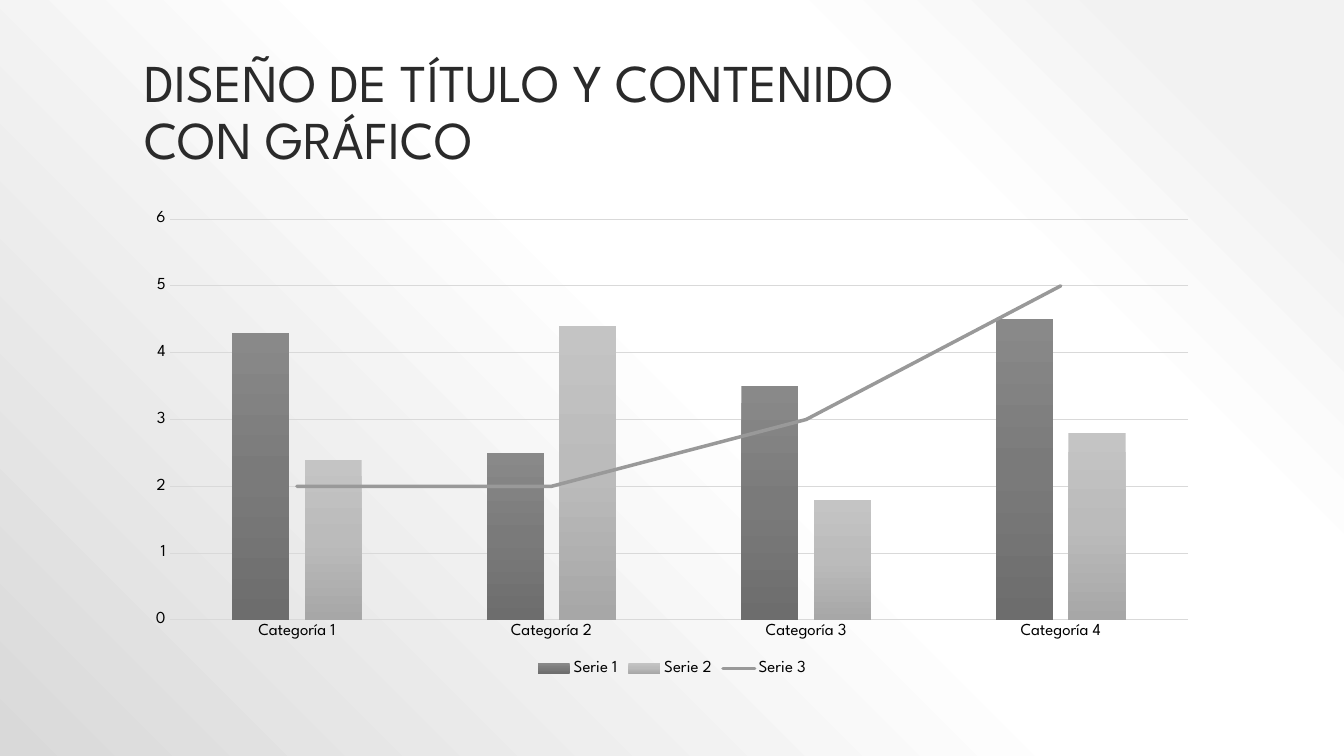
from lxml import etree
from pptx import Presentation, oxml
from pptx import util as u
from pptx.chart.data import CategoryChartData
from pptx.dml.color import RGBColor
from pptx.enum import chart as ch
from pptx.enum import text
from pptx.oxml.ns import nsdecls, qn

FONT = "League Spartan"
BLACK = RGBColor(0x00, 0x00, 0x00)
TITLE_GRAY = RGBColor(0x2A, 0x2A, 0x2A)
GRID_GRAY = RGBColor(0xD9, 0xD9, 0xD9)
LINE_GRAY = RGBColor(0x99, 0x99, 0x99)

# Gradient stops: percent and colour
BACKGROUND_STOPS = [
    (10, RGBColor(0xF2, 0xF2, 0xF2)), (28, RGBColor(0xFF, 0xFF, 0xFF)),
    (48, RGBColor(0xFF, 0xFF, 0xFF)), (100, RGBColor(0xD9, 0xD9, 0xD9)),
]
COLUMN_STOPS = [
    [(0, RGBColor(0x89, 0x89, 0x89)), (50, RGBColor(0x7A, 0x7A, 0x7A)),
     (100, RGBColor(0x6D, 0x6D, 0x6D))],
    [(0, RGBColor(0xC4, 0xC4, 0xC4)), (50, RGBColor(0xBB, 0xBB, 0xBB)),
     (100, RGBColor(0xA7, 0xA7, 0xA7))],
]
DOWNWARD = '<a:lin ang="5400000" scaled="0"/>'
FROM_TOP_RIGHT = ('<a:path path="circle">'
                  '<a:fillToRect l="100000" b="100000"/></a:path>')

CATEGORIES = ["Categoría 1", "Categoría 2", "Categoría 3", "Categoría 4"]
SERIES = {
    "Serie 1": (4.3, 2.5, 3.5, 4.5),
    "Serie 2": (2.4, 4.4, 1.8, 2.8),
    "Serie 3": (2, 2, 3, 5),
}

# Slide size and the content column, with a tenth of the width on each side
WIDTH, HEIGHT = u.Inches(13.33), u.Inches(7.5)
LEFT, CONTENT_WIDTH = int(WIDTH * 0.1), int(WIDTH * 0.8)


def gradient(stops, direction):
    stop_xml = "".join(
        f'<a:gs pos="{percent * 1000}"><a:srgbClr val="{color}"/></a:gs>'
        for percent, color in stops)
    return oxml.parse_xml(
        f'<a:gradFill {nsdecls("a")} rotWithShape="1">'
        f'<a:gsLst>{stop_xml}</a:gsLst>{direction}</a:gradFill>')


def set_background(slide):
    background = oxml.parse_xml(
        f'<p:bg {nsdecls("p", "a")}><p:bgPr><a:effectLst/></p:bgPr></p:bg>')
    background[0].insert(0, gradient(BACKGROUND_STOPS, FROM_TOP_RIGHT))
    slide.element.cSld.insert(0, background)


def style_font(font, size, color):
    font.name = FONT
    font.size = u.Pt(size)
    font.color.rgb = color


def style_line(line, color, width):
    line.color.rgb = color
    line.width = u.Pt(width)


def add_title(slide, title):
    shape = slide.shapes.add_textbox(
        LEFT, int(HEIGHT * 0.04), CONTENT_WIDTH, u.Inches(1.45))
    frame = shape.text_frame
    frame.word_wrap = True
    frame.vertical_anchor = text.MSO_ANCHOR.BOTTOM
    paragraph = frame.paragraphs[0]
    paragraph.text = title
    paragraph.line_spacing = 0.9
    for run in paragraph.runs:
        style_font(run.font, 38, TITLE_GRAY)


def move_last_series_to_line(chart):
    """Put the last column series into a line plot on the same axes."""
    bar_plot = chart.plots[0]._element
    series = bar_plot.findall(qn("c:ser"))[-1]
    for column_setting in series.findall(qn("c:invertIfNegative")):
        series.remove(column_setting)
    line_plot = oxml.parse_xml(
        f'<c:lineChart {nsdecls("c")}><c:grouping val="standard"/>'
        '<c:varyColors val="0"/><c:marker val="1"/></c:lineChart>')
    line_plot.insert(2, series)
    for axis in bar_plot.findall(qn("c:axId")):
        etree.SubElement(line_plot, qn("c:axId")).set("val", axis.get("val"))
    bar_plot.addnext(line_plot)


def style_axes(chart):
    for axis in (chart.category_axis, chart.value_axis):
        axis.major_tick_mark = ch.XL_TICK_MARK.NONE
        axis.minor_tick_mark = ch.XL_TICK_MARK.NONE
        style_font(axis.tick_labels.font, 12, BLACK)
    style_line(chart.category_axis.format.line, GRID_GRAY, 0.75)
    values = chart.value_axis
    values.minimum_scale, values.maximum_scale, values.major_unit = 0, 6, 1
    values.format.line.fill.background()
    values.has_major_gridlines = True
    style_line(values.major_gridlines.format.line, GRID_GRAY, 0.75)


def add_combined_chart(slide):
    data = CategoryChartData()
    data.categories = CATEGORIES
    for name, values in SERIES.items():
        data.add_series(name, values)
    chart = slide.shapes.add_chart(
        ch.XL_CHART_TYPE.COLUMN_CLUSTERED, LEFT, u.Inches(2),
        CONTENT_WIDTH, u.Inches(4.75), data).chart
    chart.has_title = False
    style_font(chart.font, 12, BLACK)
    move_last_series_to_line(chart)
    style_axes(chart)

    # Columns
    columns, lines = chart.plots
    columns.gap_width, columns.overlap = 219, -27
    columns.vary_by_categories = False
    for series, stops in zip(columns.series, COLUMN_STOPS):
        series._element.get_or_add_spPr().insert(0, gradient(stops, DOWNWARD))

    # Line
    series = lines.series[0]
    series.smooth = False
    series.marker.style = ch.XL_MARKER_STYLE.NONE
    style_line(series.format.line, LINE_GRAY, 2.5)
    series.format.line._ln.set("cap", "rnd")

    # Legend
    chart.has_legend = True
    chart.legend.position = ch.XL_LEGEND_POSITION.BOTTOM
    chart.legend.include_in_layout = False
    style_font(chart.legend.font, 12, BLACK)


def main():
    presentation = Presentation()
    presentation.slide_width, presentation.slide_height = WIDTH, HEIGHT
    slide = presentation.slides.add_slide(presentation.slide_layouts[6])
    set_background(slide)
    add_title(slide, "DISEÑO DE TÍTULO Y CONTENIDO \nCON GRÁFICO")
    add_combined_chart(slide)
    presentation.save("out.pptx")


if __name__ == "__main__":
    main()
